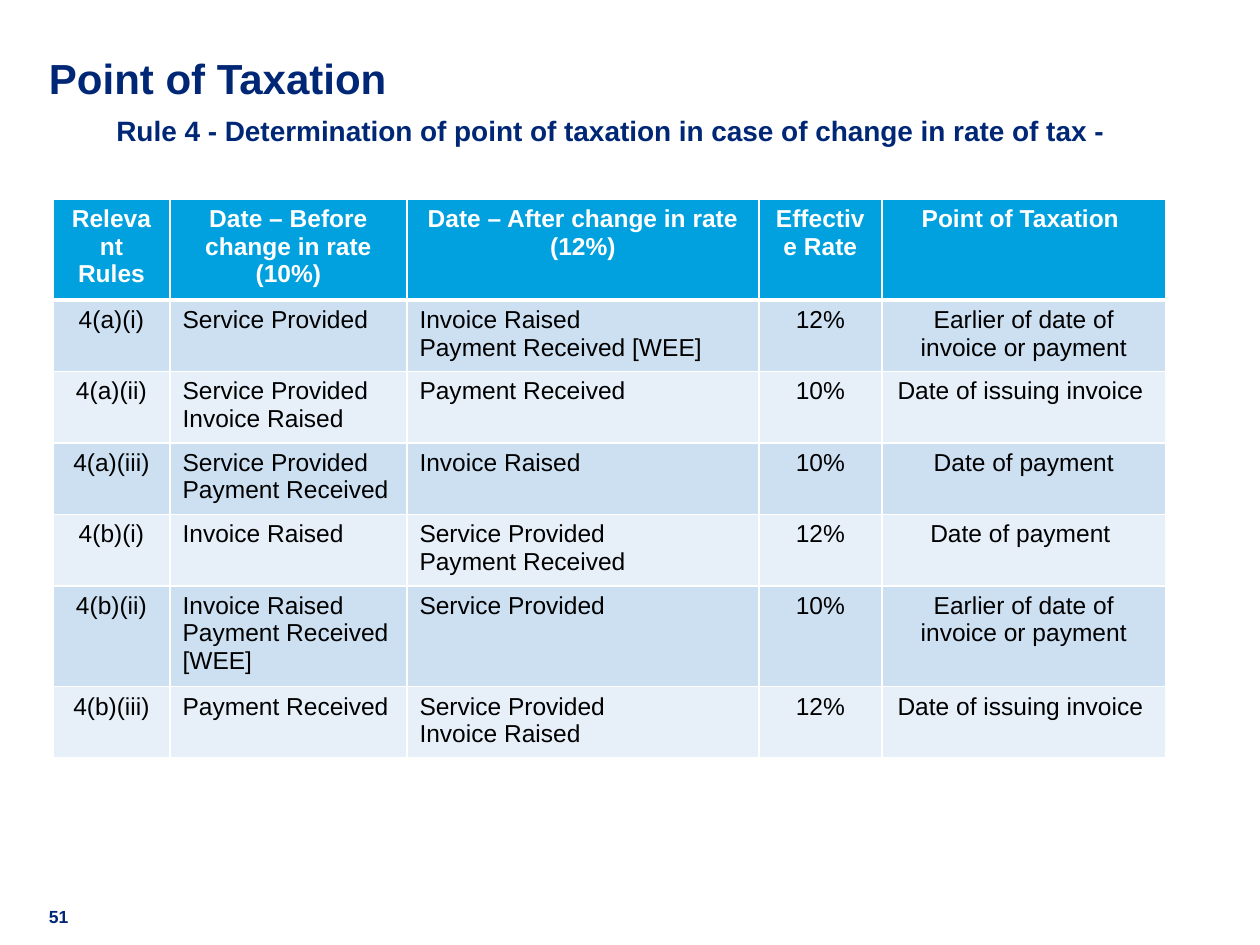
from lxml import etree
from pptx import Presentation, util as u
from pptx.dml.color import RGBColor
from pptx.enum import text
from pptx.oxml.ns import qn

PX = 914400 // 126
FONT = "Arial"
COLORS = {
    "navy": "002776",
    "header": "00A1DE",
    "odd": "CCE0F2",
    "even": "E7F0F9",
    "white": "FFFFFF",
    "black": "000000",
}
COLUMN_WIDTHS = [117, 237, 352, 123, 284]
ROW_HEIGHT = 52
CENTERED_COLUMNS = {0, 3, 4}
HEADERS = [
    "Relevant Rules",
    "Date – Before change in rate (10%)",
    "Date – After change in rate (12%)",
    "Effective Rate",
    "Point of Taxation ",
]
SERVICE = "Service Provided"
INVOICE = "Invoice Raised"
PAYMENT = "Payment Received"
PAYMENT_WEE = "Payment Received [WEE]"
EARLIER = "Earlier of date of invoice or payment"
RULES = [
    ["4(a)(i)", SERVICE, f"{INVOICE}\n{PAYMENT_WEE}", "12%", EARLIER],
    ["4(a)(ii)", f"{SERVICE}\n{INVOICE}", PAYMENT, "10%", "Date of issuing invoice "],
    ["4(a)(iii)", f"{SERVICE}\n{PAYMENT}", INVOICE, "10%", "Date of payment"],
    ["4(b)(i)", INVOICE, f"{SERVICE}\n{PAYMENT}", "12%", "Date of payment "],
    ["4(b)(ii)", f"{INVOICE}\n{PAYMENT_WEE}", SERVICE, "10%", EARLIER],
    ["4(b)(iii)", PAYMENT, f"{SERVICE}\n{INVOICE}", "12%", "Date of issuing invoice "],
]


def px(length):
    return u.Emu(length * PX)


def style_paragraph(para, size, color, bold, centered):
    para.alignment = text.PP_ALIGN.CENTER if centered else text.PP_ALIGN.LEFT
    para.font.name = FONT
    para.font.size = u.Pt(size)
    para.font.bold = bold
    para.font.color.rgb = RGBColor.from_string(COLORS[color])


def add_text(page, words, left, top, width, height, size, centered=False):
    box = page.shapes.add_textbox(px(left), px(top), px(width), px(height))
    frame = box.text_frame
    frame.word_wrap = True
    frame.margin_left = frame.margin_right = 0
    frame.margin_top = frame.margin_bottom = 0
    frame.text = words
    style_paragraph(frame.paragraphs[0], size, "navy", True, centered)


def set_borders(cell, top, bottom):
    properties = cell._tc.get_or_add_tcPr()
    sides = {"lnL": 1, "lnR": 1, "lnT": top, "lnB": bottom}
    for position, (side, points) in enumerate(sides.items()):
        line = etree.Element(qn(f"a:{side}"), w=str(u.Pt(points)))
        fill = etree.SubElement(line, qn("a:solidFill"))
        etree.SubElement(fill, qn("a:srgbClr"), val=COLORS["white"])
        properties.insert(position, line)


def fill_cell(cell, words, fill, color, bold, centered):
    cell.fill.solid()
    cell.fill.fore_color.rgb = RGBColor.from_string(COLORS[fill])
    cell.text_frame.text = words
    for para in cell.text_frame.paragraphs:
        style_paragraph(para, 14, color, bold, centered)


def add_rules_table(page, left, top):
    rows = [HEADERS] + RULES
    frame = page.shapes.add_table(
        len(rows), len(COLUMN_WIDTHS), px(left), px(top),
        px(sum(COLUMN_WIDTHS)), px(ROW_HEIGHT * len(rows)),
    )
    table = frame.table
    for column, width in zip(table.columns, COLUMN_WIDTHS):
        column.width = px(width)
    for row_index, row in enumerate(rows):
        table.rows[row_index].height = px(ROW_HEIGHT)
        is_header = row_index == 0
        fill = "header" if is_header else "odd" if row_index % 2 else "even"
        color = "white" if is_header else "black"
        for column_index, words in enumerate(row):
            cell = table.cell(row_index, column_index)
            centered = is_header or column_index in CENTERED_COLUMNS
            fill_cell(cell, words, fill, color, is_header, centered)
            set_borders(cell, 3 if row_index == 1 else 1, 3 if is_header else 1)


def main():
    deck = Presentation()
    deck.slide_width, deck.slide_height = px(1260), px(945)
    page = deck.slides.add_slide(deck.slide_layouts[6])
    add_text(page, "Point of Taxation", 49, 53, 1160, 83, 24)
    add_text(page, "51", 49, 906, 49, 16, 10)
    add_text(
        page,
        "Rule 4 - Determination of point of taxation in case of change in rate of tax - ",
        48, 114, 1133, 790, 16, centered=True,
    )
    add_rules_table(page, 53, 199)
    deck.save("out.pptx")


if __name__ == "__main__":
    main()
